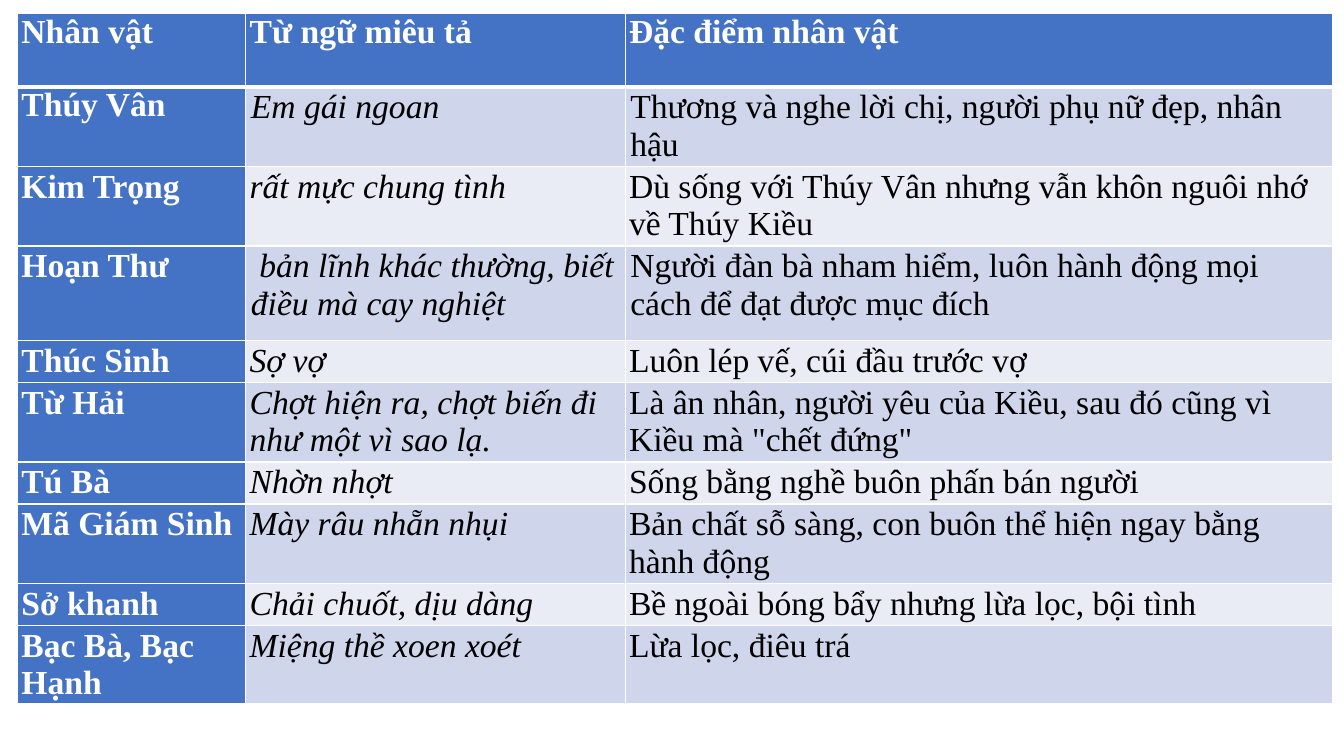
from lxml.etree import SubElement
from pptx import Presentation
from pptx.dml.color import RGBColor
from pptx.enum.text import MSO_ANCHOR as Anchor
from pptx.oxml.ns import qn
from pptx.util import Pt

# Content
HEADINGS = ("Nhân vật", "Từ ngữ miêu tả", "Đặc điểm nhân vật")
CHARACTERS = [
    ("Thúy Vân", "Em gái ngoan",
     "Thương và nghe lời chị, người phụ nữ đẹp, nhân hậu"),
    ("Kim Trọng", "rất mực chung tình",
     "Dù sống với Thúy Vân nhưng vẫn khôn nguôi nhớ về Thúy Kiều"),
    ("Hoạn Thư", " bản lĩnh khác thường, biết điều mà cay nghiệt",
     "Người đàn bà nham hiểm, luôn hành động mọi cách để đạt được mục đích"),
    ("Thúc Sinh", "Sợ vợ", "Luôn lép vế, cúi đầu trước vợ"),
    ("Từ Hải", "Chợt hiện ra, chợt biến đi như một vì sao lạ.",
     "Là ân nhân, người yêu của Kiều, sau đó cũng vì Kiều mà \"chết đứng\""),
    ("Tú Bà", "Nhờn nhợt", "Sống bằng nghề buôn phấn bán người"),
    ("Mã Giám Sinh", "Mày râu nhẵn nhụi",
     "Bản chất sỗ sàng, con buôn thể hiện ngay bằng hành động"),
    ("Sở khanh", "Chải chuốt, dịu dàng",
     "Bề ngoài bóng bẩy nhưng lừa lọc, bội tình"),
    ("Bạc Bà, Bạc Hạnh", "Miệng thề xoen xoét", "Lừa lọc, điêu trá"),
]
LEFT, TOP = 12.6, 9.7
COLUMN_WIDTHS = (163, 271, 505.5)
ONE_LINE, TWO_LINES = 30, 56.8
ROW_HEIGHTS = (52.5, TWO_LINES, TWO_LINES, 67.5, ONE_LINE, TWO_LINES,
               ONE_LINE, TWO_LINES, ONE_LINE, 56)
BLUE, WHITE, BLACK = "4472C4", "FFFFFF", "000000"
BANDS = ("E9EBF5", "CFD5EA")
WIDE_INSET_ROWS = (1, 3)


def color(value):
    return RGBColor.from_string(value)


def add_borders(cell, bottom_width):
    """Draw white lines on all four sides; these go before the fill."""
    properties = cell._tc.get_or_add_tcPr()
    for side, width in (("L", 1), ("R", 1), ("T", 1), ("B", bottom_width)):
        line = SubElement(properties, qn("a:ln" + side), w=str(Pt(width)))
        fill = SubElement(line, qn("a:solidFill"))
        SubElement(fill, qn("a:srgbClr"), val=WHITE)


def fill_cell(cell, text, row, column):
    is_label = row == 0 or column == 0
    add_borders(cell, 3 if row == 0 else 1)
    cell.fill.solid()
    cell.fill.fore_color.rgb = color(BLUE if is_label else BANDS[row % 2])

    # Insets
    wide = row in WIDE_INSET_ROWS and column > 0
    flush = row == 0 or (row == 1 and column == 0)
    cell.margin_left = cell.margin_right = Pt(3.6 if wide else 2.7)
    cell.margin_top = cell.margin_bottom = Pt(0 if flush else 1.4)
    cell.vertical_anchor = Anchor.TOP

    # Text
    span = cell.text_frame.paragraphs[0].add_run()
    span.text = text
    span.font.name = "Times New Roman"
    span.font.size = Pt(24)
    span.font.bold = is_label
    span.font.italic = column == 1 and not is_label
    span.font.color.rgb = color(WHITE if is_label else BLACK)


def main():
    deck = Presentation()
    deck.slide_width, deck.slide_height = Pt(960), Pt(540)
    page = deck.slides.add_slide(deck.slide_layouts[6])

    # Character table
    rows = [HEADINGS, *CHARACTERS]
    table = page.shapes.add_table(
        len(rows), len(HEADINGS), Pt(LEFT), Pt(TOP),
        Pt(sum(COLUMN_WIDTHS)), Pt(sum(ROW_HEIGHTS))).table
    table.first_col = True
    for column, width in zip(table.columns, COLUMN_WIDTHS):
        column.width = Pt(width)
    for row, height in zip(table.rows, ROW_HEIGHTS):
        row.height = Pt(height)
    for row, texts in enumerate(rows):
        for column, text in enumerate(texts):
            fill_cell(table.cell(row, column), text, row, column)

    deck.save("out.pptx")


if __name__ == "__main__":
    main()
